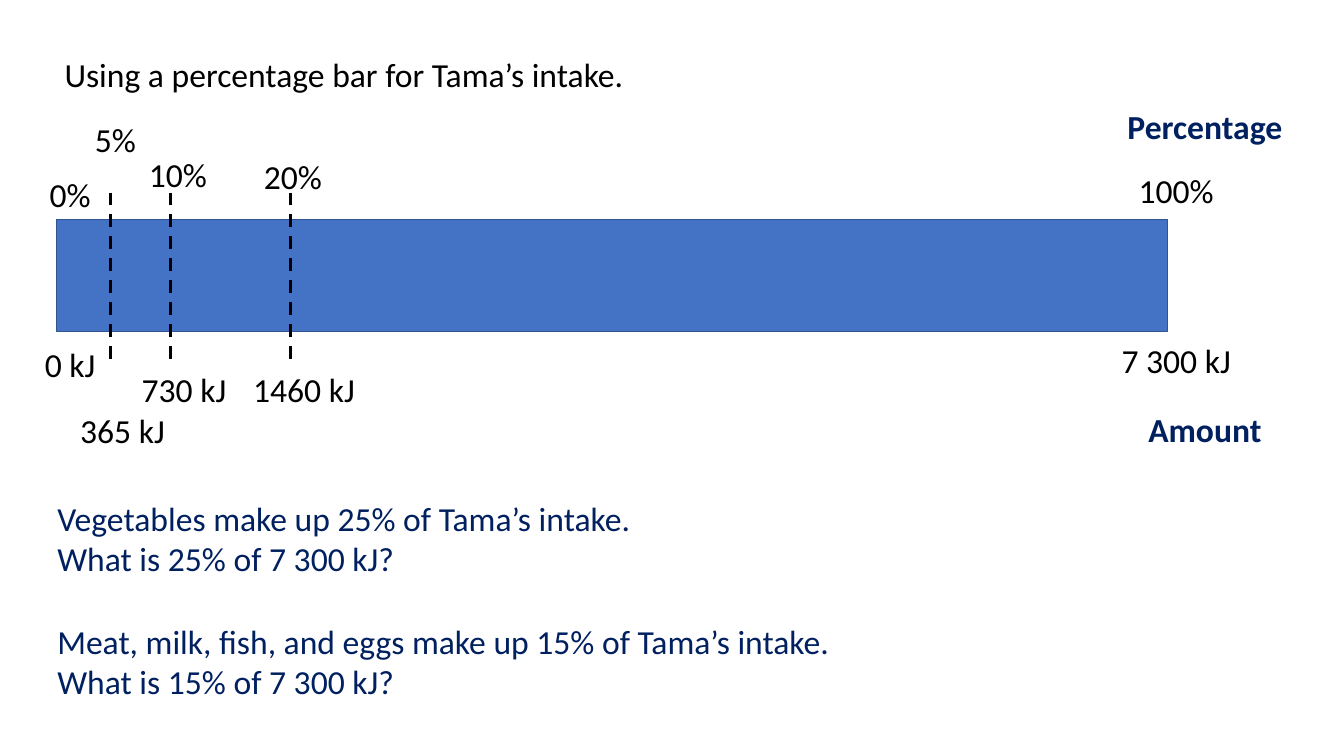
from lxml import etree
from pptx import Presentation
from pptx.dml.color import RGBColor
from pptx.enum.dml import MSO_LINE_DASH_STYLE as DASH
from pptx.enum.shapes import MSO_CONNECTOR, MSO_SHAPE
from pptx.enum.text import MSO_ANCHOR, MSO_AUTO_SIZE, PP_ALIGN
from pptx.oxml.ns import qn
from pptx.util import Emu, Pt

PX = 9144
BLACK = RGBColor(0x00, 0x00, 0x00)
NAVY = RGBColor(0x00, 0x20, 0x60)
BLUE = RGBColor(0x44, 0x72, 0xC4)
EDGE = RGBColor(0x31, 0x53, 0x8F)
LABEL_W, HEADING_W, LINE_H, PAIR_H = 135, 192, 50, 91
TICK_TOP, TICK_H = -27, 168

# percentage, its offset from the bar, amount, its offset from the bar, tick offset
MARKS = [
    ("0%", (-54, -50), "0 kJ", (-54, 118), None),
    ("5%", (-9, -105), "365 kJ", (-2, 184), 54),
    ("10%", (53, -70), "730 kJ", (59, 143), 113),
    ("20%", (167, -68), "1460 kJ", (178, 143), 232),
    ("100%", (1043, -54), "7 300 kJ", (1043, 114), None),
]
HEADINGS = [("Percentage", (1043, -118)), ("Amount", (1043, 183))]
QUESTIONS = [
    ["Vegetables make up 25% of Tama’s intake.", "What is 25% of 7 300 kJ?"],
    ["Meat, milk, fish, and eggs make up 15% of Tama’s intake.",
     "What is 15% of 7 300 kJ?"],
]


def px(*lengths):
    """Turn px lengths into EMU."""
    return [Emu(n * PX) for n in lengths]


def write(sp, lines, color=BLACK, bold=False, align=PP_ALIGN.LEFT):
    """Fill a shape with one formatted paragraph per line."""
    tf = sp.text_frame
    tf.word_wrap = True
    tf.auto_size = MSO_AUTO_SIZE.NONE
    tf.vertical_anchor = MSO_ANCHOR.TOP
    for i, line in enumerate(lines):
        p = tf.paragraphs[0] if i == 0 else tf.add_paragraph()
        p.alignment = align
        r = p.add_run()
        r.text = line
        r.font.name, r.font.size, r.font.bold = "Calibri", Pt(24), bold
        r.font.color.rgb = color


def add_text(s, box, lines, **fmt):
    """Add a text box in the given px box."""
    write(s.shapes.add_textbox(*px(*box)), lines, **fmt)


def add_title(s, box, text):
    """Move the title placeholder into the box and write it."""
    sp = s.shapes.title
    sp.left, sp.top, sp.width, sp.height = px(*box)
    write(sp, [text])


def add_tick(s, x, y, h):
    """Draw a dashed vertical line."""
    tick = s.shapes.add_connector(MSO_CONNECTOR.STRAIGHT, *px(x, y, x, y + h))
    tick.line.color.rgb = BLACK
    tick.line.width = Pt(2.25)
    tick.line.dash_style = DASH.DASH
    etree.SubElement(tick._element.spPr, qn("a:effectLst"))


def add_percentage_bar(s, box):
    """Draw the bar with its headings, ticks and labels."""
    x, y, w, h = box
    bar = s.shapes.add_shape(MSO_SHAPE.RECTANGLE, *px(*box))
    bar.shadow.inherit = False
    bar.fill.solid()
    bar.fill.fore_color.rgb = BLUE
    bar.line.color.rgb = EDGE
    bar.line.width = Pt(1)
    for text, (dx, dy) in HEADINGS:
        add_text(s, (x + dx, y + dy, HEADING_W, LINE_H), [text],
                 color=NAVY, bold=True, align=PP_ALIGN.CENTER)
    for percent, percent_at, amount, amount_at, tick in MARKS:
        if tick is not None:
            add_tick(s, x + tick, y + TICK_TOP, TICK_H)
        for text, (dx, dy) in ((percent, percent_at), (amount, amount_at)):
            add_text(s, (x + dx, y + dy, LABEL_W, LINE_H), [text],
                     align=PP_ALIGN.CENTER)


def add_questions(s, box):
    """Place the questions at the top and bottom of the box."""
    x, y, w, h = box
    step = (h - PAIR_H) // (len(QUESTIONS) - 1)
    for i, lines in enumerate(QUESTIONS):
        add_text(s, (x, y + i * step, w, PAIR_H), lines, color=NAVY)


def main():
    """Build and save the slide."""
    prs = Presentation()
    prs.slide_width, prs.slide_height = px(1333, 750)
    s = prs.slides.add_slide(prs.slide_layouts[5])
    add_title(s, (54, 48, 678, 50), "Using a percentage bar for Tama’s intake.")
    add_percentage_bar(s, (56, 218, 1102, 111))
    add_questions(s, (47, 489, 1051, 213))
    prs.save("out.pptx")


if __name__ == "__main__":
    main()
